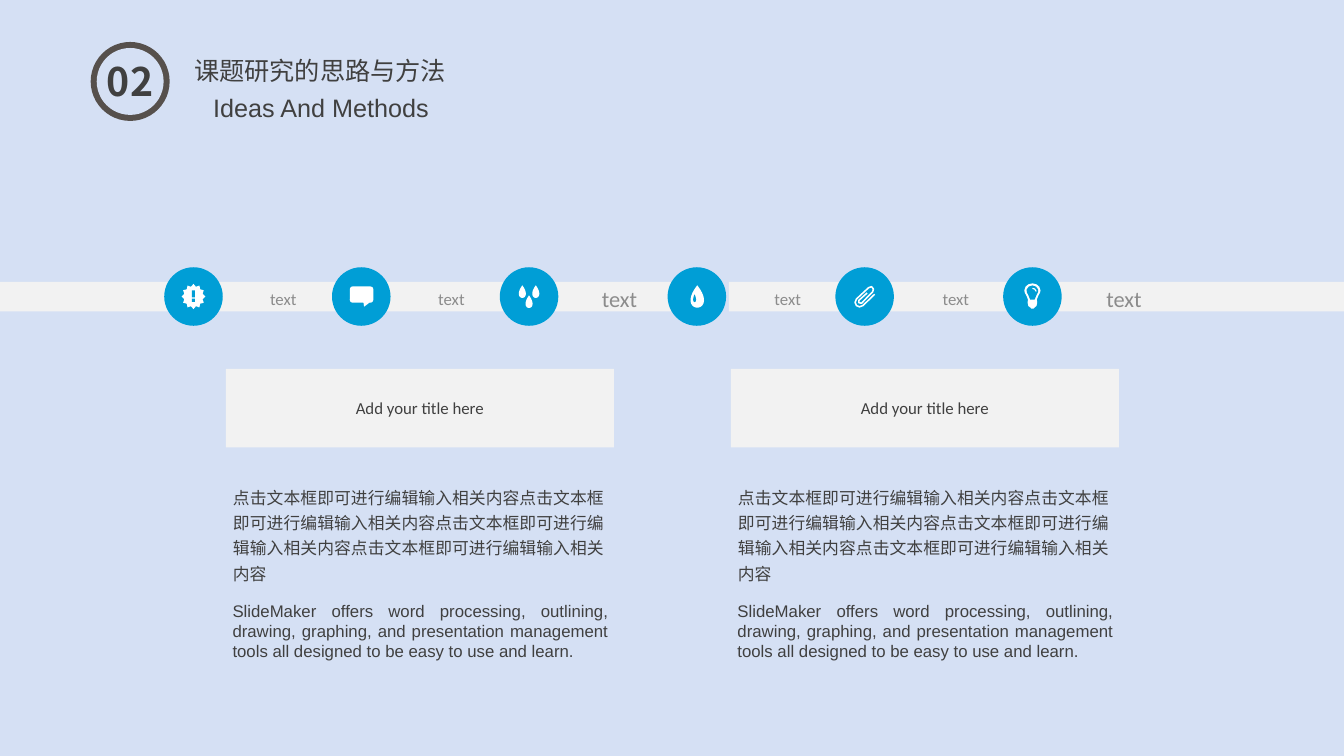
from math import cos, pi, sin

from lxml.etree import SubElement
from pptx import Presentation
from pptx.dml.color import RGBColor
from pptx.enum.shapes import MSO_SHAPE as SHAPE
from pptx.enum.text import MSO_ANCHOR as ANCHOR, MSO_AUTO_SIZE as AUTO, PP_ALIGN as ALIGN
from pptx.oxml.ns import qn
from pptx.util import Pt

SKY, BLUE, GREY, WHITE = "D5E0F4", "009ED6", "F2F2F2", "FFFFFF"
BROWN, DARK, LABEL = "56504C", "404040", "8C8C8C"
CJK = "Noto Sans CJK SC"
CHINESE = "点击文本框即可进行编辑输入相关内容" * 4
ENGLISH = ("SlideMaker offers word processing, outlining, drawing, graphing, and "
           "presentation management tools all designed to be easy to use and learn.")
BARS = [(0, 240.5), (275.8, 84.2), (396, 84.2), (520.6, 84.2), (635.8, 84.2), (756, 204)]
LABEL_SIZES = [12, 12, 16, 12, 12, 16]
AXIS_Y = 211.8
CLIP = [(7.2, -1.6), (-1.2, 6.5), (-3.6, 7.4), (-5.8, 6.5), (-6.8, 4.3), (-5.8, 1.8),
        (2.9, -6.3), (5, -7), (6.3, -5.3), (5.8, -3.4), (-2.2, 4.8), (-4.1, 4.5),
        (-4, 2.7), (1.8, -2.5)]
BULB = [(0, -9.4), (2.9, -8.7), (4.9, -7), (5.8, -4.3), (5.4, -2.6), (4.3, -0.7),
        (3.2, 2), (3.4, 4.5), (2.9, 6.8), (1.6, 7.8), (0.8, 8.6)]
GLASS = [(0, -7.9), (2.6, -7), (4.1, -5), (4, -3), (3, -1.2), (1.6, 2.2)]
GLINT = [(0, -5.8), (1.6, -5.3), (2.7, -3.6)]


def rgb(color):
    """Turn a hex string into a colour."""
    return RGBColor.from_string(color)


def apply(obj, values):
    """Set attributes from a dict."""
    for name, value in values.items():
        setattr(obj, name, value)


def write(sp, text, size, font=CJK, color=DARK, inset=None, bold=False, frame=None, para=None):
    """Put one formatted paragraph into a shape."""
    tf = sp.text_frame
    apply(tf, {"word_wrap": True, "auto_size": AUTO.NONE, "vertical_anchor": ANCHOR.TOP,
               **(frame or {})})
    if inset is not None:
        apply(tf, dict.fromkeys(
            ("margin_left", "margin_right", "margin_top", "margin_bottom"), Pt(inset)))
    p = tf.paragraphs[0]
    apply(p, {"alignment": ALIGN.CENTER, **(para or {})})
    r = p.add_run()
    r.text = text
    apply(r.font, {"size": Pt(size), "name": font, "bold": bold})
    r.font.color.rgb = rgb(color)
    SubElement(r.font._element, qn("a:ea"), typeface=font)


def add_text(s, box, text, size, **style):
    """Add a text box."""
    write(s.shapes.add_textbox(*map(Pt, box)), text, size, **style)


def paint(sp, fill):
    """Give a shape a plain fill without line or shadow."""
    sp.shadow.inherit = False
    sp.fill.solid()
    sp.fill.fore_color.rgb = rgb(fill)
    sp.line.fill.background()


def add_shape(s, kind, box, fill, adjust=()):
    """Add a flat preset shape."""
    sp = s.shapes.add_shape(kind, *map(Pt, box))
    paint(sp, fill)
    for i, value in enumerate(adjust):
        sp.adjustments[i] = value
    return sp


def add_outline(s, cx, points, fill=WHITE, stroke=None):
    """Draw points around a timeline centre, filled or as an open stroke."""
    pts = [(Pt(cx + x), Pt(AXIS_Y + y)) for x, y in points]
    builder = s.shapes.build_freeform(*pts[0])
    builder.add_line_segments(pts[1:], close=stroke is None)
    sp = builder.convert_to_shape()
    paint(sp, fill)
    if stroke:
        sp.fill.background()
        sp.line.color.rgb = rgb(fill)
        sp.line.width = Pt(stroke)


def mirrored(half):
    """Complete a right-hand profile with its left side."""
    return half + [(-x, y) for x, y in reversed(half[1:])]


def drop(x, top, width, height):
    """Return the outline of a water drop."""
    angles = [2 * pi * i / 36 for i in range(36)]
    return [(x + 0.65 * width * sin(t) * sin(t / 2), top + height * (1 - cos(t)) / 2)
            for t in angles]


def badge_icon(s, cx):
    """Draw a jagged badge with an exclamation mark."""
    add_shape(s, SHAPE.STAR_12_POINT, (cx - 8.5, AXIS_Y - 9, 17, 18), WHITE, [0.4])
    for y, height in ((-4.3, 5), (1.6, 2.2)):
        add_shape(s, SHAPE.RECTANGLE, (cx - 1.1, AXIS_Y + y, 2.2, height), BLUE)


def chat_icon(s, cx):
    """Draw a speech bubble."""
    add_shape(s, SHAPE.ROUNDED_RECTANGULAR_CALLOUT, (cx - 8.2, AXIS_Y - 7.2, 16.8, 11.6),
              WHITE, [0.11, 0.75, 0.18])


def rain_icon(s, cx):
    """Draw three small drops."""
    for x, top in ((-4.8, -8), (0, -0.8), (4.8, -8)):
        add_outline(s, cx, drop(x, top, 5, 9))


def drop_icon(s, cx):
    """Draw one large drop with a highlight."""
    add_outline(s, cx, drop(0.3, -8, 9.6, 16))
    add_outline(s, cx, drop(-1.6, -1.5, 2, 5.5), BLUE)


def clip_icon(s, cx):
    """Draw a paper clip."""
    add_outline(s, cx, CLIP, stroke=1.1)


def bulb_icon(s, cx):
    """Draw a light bulb."""
    add_outline(s, cx, mirrored(BULB))
    add_outline(s, cx, mirrored(GLASS), BLUE)
    add_outline(s, cx, GLINT, stroke=0.8)


def add_header(s):
    """Add the numbered ring and the two title lines."""
    add_shape(s, SHAPE.OVAL, (64.8, 30, 56.4, 56.4), BROWN)
    add_shape(s, SHAPE.OVAL, (69.1, 34.3, 47.8, 47.8), SKY)
    add_text(s, (67, 37.4, 51.8, 41), "02", 28, bold=True)
    title = s.shapes.title
    apply(title, dict(zip(("left", "top", "width", "height"), map(Pt, (131.5, 14.4, 197, 51)))))
    write(title, "课题研究的思路与方法", 18, frame={"word_wrap": False},
          para={"alignment": ALIGN.LEFT, "line_spacing": 2.0})
    add_text(s, (31.7, 62.6, 395.3, 29), "Ideas And Methods", 18, font="Arial")


def add_timeline(s):
    """Add the band, its labels and the icon circles."""
    for left, width in BARS:
        add_shape(s, SHAPE.RECTANGLE, (left, 201.4, width, 21), GREY)
    icons = (badge_icon, chat_icon, rain_icon, drop_icon, clip_icon, bulb_icon)
    for i, (icon, size) in enumerate(zip(icons, LABEL_SIZES)):
        cx = 138.2 + 119.85 * i
        add_text(s, (164.9 + 120.1 * i, 204.5, 75, 17.3), "text", size, font="Calibri",
                 color=LABEL, frame={"vertical_anchor": ANCHOR.MIDDLE})
        add_shape(s, SHAPE.OVAL, (cx - 20.9, AXIS_Y - 20.9, 41.8, 41.8), BLUE)
        icon(s, cx)


def add_column(s, left):
    """Add a heading panel with its two paragraphs."""
    panel = add_shape(s, SHAPE.RECTANGLE, (left, 263.6, 277.2, 56), GREY)
    write(panel, "Add your title here", 12, font="Calibri",
          frame={"vertical_anchor": ANCHOR.MIDDLE})
    add_text(s, (left - 2, 341.3, 279.4, 80), CHINESE, 12,
             para={"alignment": ALIGN.JUSTIFY, "line_spacing": 1.25})
    add_text(s, (left + 4.8, 429.1, 268.6, 44), ENGLISH, 12, font="Arial", inset=0,
             para={"alignment": ALIGN.JUSTIFY})


def main():
    """Build and save the slide."""
    prs = Presentation()
    apply(prs, {"slide_width": Pt(960), "slide_height": Pt(540)})
    s = prs.slides.add_slide(prs.slide_layouts[5])
    s.background.fill.solid()
    s.background.fill.fore_color.rgb = rgb(SKY)
    add_header(s)
    add_timeline(s)
    for left in (161.3, 522):
        add_column(s, left)
    prs.save("out.pptx")


if __name__ == "__main__":
    main()
